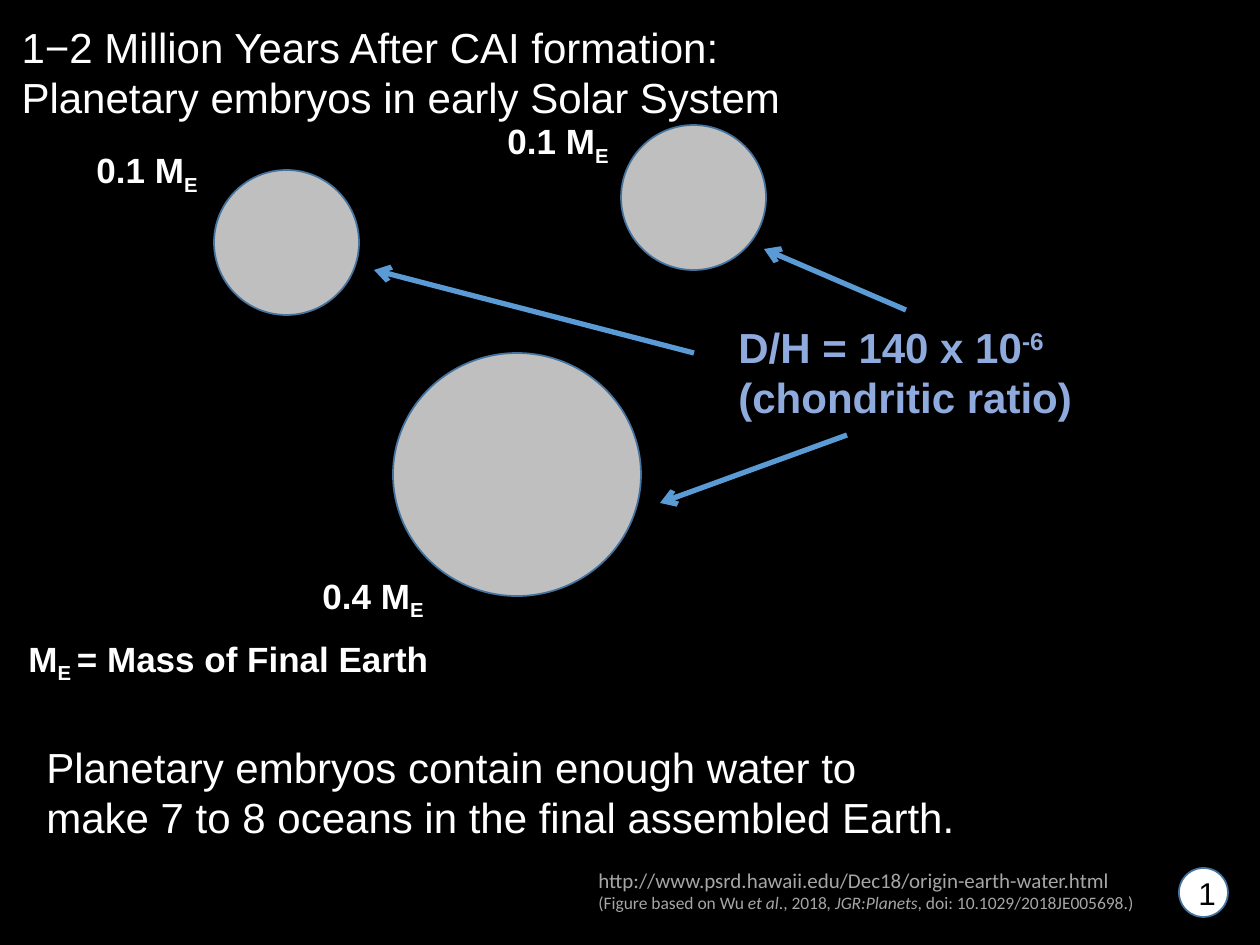
import pptx
import pptx.util
import pptx.dml.color
import pptx.enum.shapes
import pptx.enum.text
import pptx.oxml
import pptx.oxml.ns

SCALE = 914400 / 126  # EMU in one pixel
RGB = pptx.dml.color.RGBColor
BLACK, WHITE = RGB(0, 0, 0), RGB(255, 255, 255)
EMBRYO_GRAY, OUTLINE_BLUE = RGB(0xBF, 0xBF, 0xBF), RGB(0x43, 0x73, 0x9E)
ARROW_BLUE, RATIO_BLUE = RGB(0x5B, 0x9B, 0xD5), RGB(0x8F, 0xAA, 0xDC)
SOURCE_GRAY = RGB(0xA6, 0xA6, 0xA6)

# Content: a paragraph is a list of (text, extra run format)
SUB, SUP, ITALIC = {"baseline": -25000}, {"baseline": 30000}, {"italic": True}
SMALL = {"size": 10}
SMALL_ITALIC = SMALL | ITALIC

TITLE = [[("1−2 Million Years After CAI formation:", {})],
         [("Planetary embryos in early Solar System", {})]]
TITLE_AREA = (9, 15, 793, 115)

EMBRYOS = [  # circle, label position, mass
    ((214, 170, 145, 145), (84, 142), "0.1"),
    ((621, 125, 145, 145), (495, 113), "0.1"),
    ((393, 353, 248, 243), (310, 568), "0.4"),
]
LABEL_SIZE = (130, 55)
ARROWS = [((694, 353), (374, 270)),
          ((906, 310), (764, 249)),
          ((847, 435), (660, 503))]

RATIO = [[("D/H = 140 x 10", {}), ("-6", SUP)], [("(chondritic ratio)", {})]]
MASS_KEY = [[("M", {}), ("E ", SUB), ("= Mass of Final Earth", {})]]
CONCLUSION = [[("Planetary embryos contain enough water to make 7 to 8 oceans "
                "in the final assembled Earth.", {})]]
SOURCE = [[("http://www.psrd.hawaii.edu/Dec18/origin-earth-water.html", {})],
          [("(Figure based on Wu ", SMALL), ("et al", SMALL_ITALIC),
           ("., 2018", SMALL), (", JGR:Planets", SMALL_ITALIC),
           (", doi: 10.1029/2018JE005698.)", SMALL)]]
TEXTS = [  # paragraphs, area, size, colour, bold, font, wrap
    (RATIO, (726, 315, 362, 115), 24, RATIO_BLUE, True, "Arial", False),
    (MASS_KEY, (16, 631, 435, 55), 20, WHITE, True, "Arial", False),
    (CONCLUSION, (34, 735, 940, 115), 24, WHITE, False, "Arial", True),
    (SOURCE, (586, 861, 580, 59), 12, SOURCE_GRAY, False, "Calibri", True),
]
PAGE_NUMBER = [[("1", {})]]
PAGE_CIRCLE = (1179, 868, 49, 49)


def emu(lengths):
    return [round(length * SCALE) for length in lengths]


def write(frame, paragraphs, size, color, bold=False, font="Arial", align="LEFT"):
    for index, runs in enumerate(paragraphs):
        para = frame.add_paragraph() if index else frame.paragraphs[0]
        para.alignment = getattr(pptx.enum.text.PP_ALIGN, align)
        for text, extra in runs:
            span = para.add_run()
            span.text = text
            span.font.name = font
            span.font.size = pptx.util.Pt(extra.get("size", size))
            span.font.bold = bold
            span.font.italic = extra.get("italic", False)
            span.font.color.rgb = color
            if "baseline" in extra:
                span.font._element.set("baseline", str(extra["baseline"]))


def add_text(paragraphs, area, size, color, bold, font="Arial", wrap=False):
    box = page.shapes.add_textbox(*emu(area))
    box.text_frame.word_wrap = wrap
    write(box.text_frame, paragraphs, size, color, bold, font)


def add_circle(area, fill):
    circle = page.shapes.add_shape(pptx.enum.shapes.MSO_SHAPE.OVAL, *emu(area))
    circle.shadow.inherit = False
    circle.fill.solid()
    circle.fill.fore_color.rgb = fill
    circle.line.color.rgb = OUTLINE_BLUE
    circle.line.width = pptx.util.Pt(1)
    return circle


def add_arrow(start, end):
    arrow = page.shapes.add_connector(
        pptx.enum.shapes.MSO_CONNECTOR.STRAIGHT, *emu(start + end))
    arrow.line.color.rgb = ARROW_BLUE
    arrow.line.width = pptx.util.Pt(3)
    tail = pptx.oxml.parse_xml(
        f'<a:tailEnd {pptx.oxml.ns.nsdecls("a")} type="arrow"/>')
    arrow.line._get_or_add_ln().append(tail)
    arrow._element.spPr.append(pptx.oxml.parse_xml(
        f'<a:effectLst {pptx.oxml.ns.nsdecls("a")}/>'))


# Page and title
deck = pptx.Presentation()
deck.slide_width, deck.slide_height = emu((1260, 945))
page = deck.slides.add_slide(deck.slide_layouts[5])
page.background.fill.solid()
page.background.fill.fore_color.rgb = BLACK

title = page.shapes.title
title.left, title.top, title.width, title.height = emu(TITLE_AREA)
title.text_frame.word_wrap = False
title.text_frame.auto_size = pptx.enum.text.MSO_AUTO_SIZE.NONE
title.text_frame.vertical_anchor = pptx.enum.text.MSO_ANCHOR.TOP
write(title.text_frame, TITLE, 24, WHITE)

# Embryos with their masses
for area, label_at, mass in EMBRYOS:
    add_circle(area, EMBRYO_GRAY)
    add_text([[(f"{mass} M", {}), ("E", SUB)]], label_at + LABEL_SIZE,
             20, WHITE, True)

# Arrows from the ratio to the embryos
for start, end in ARROWS:
    add_arrow(start, end)

# Remaining texts
for entry in TEXTS:
    add_text(*entry)

# Page number
badge = add_circle(PAGE_CIRCLE, WHITE)
badge.text_frame.vertical_anchor = pptx.enum.text.MSO_ANCHOR.MIDDLE
write(badge.text_frame, PAGE_NUMBER, 18, BLACK, align="CENTER")

deck.save("out.pptx")
